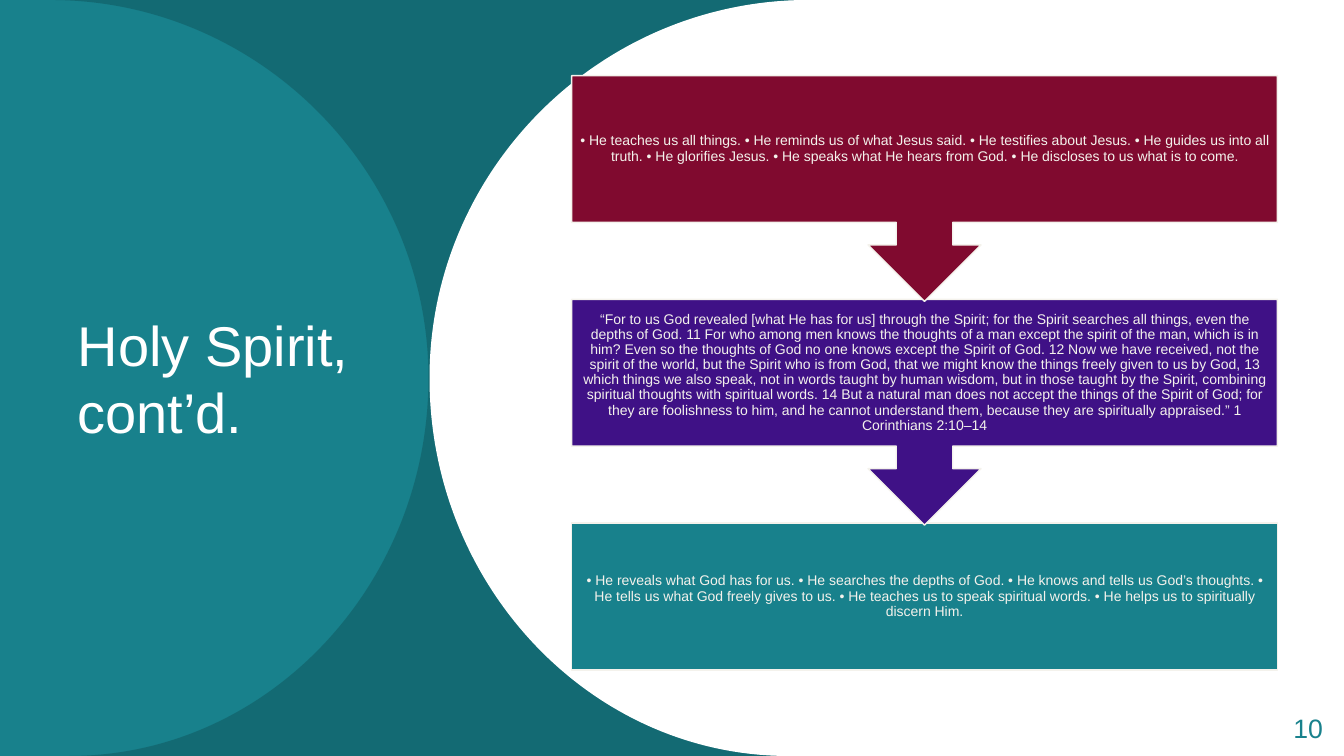
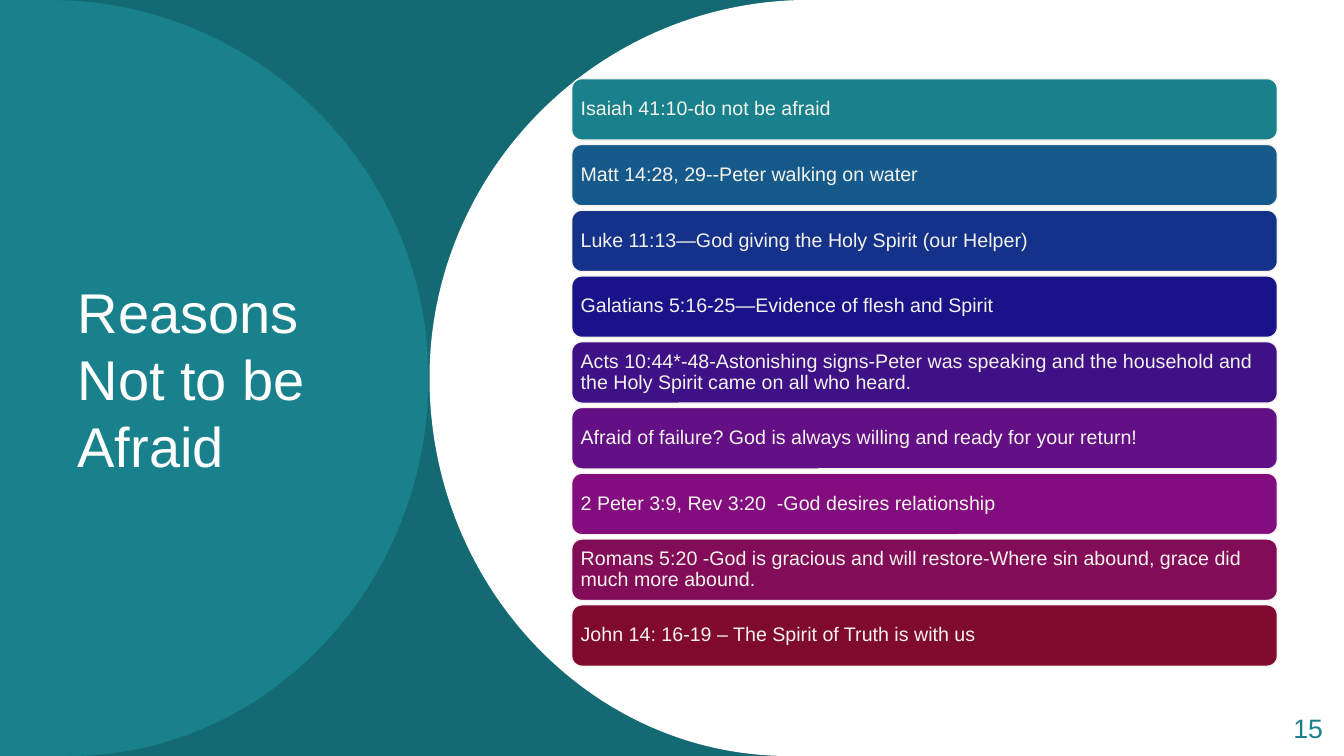
from lxml.etree import SubElement
from pptx import Presentation
from pptx.dml.color import RGBColor
from pptx.enum.shapes import MSO_SHAPE as Kind
from pptx.enum.text import MSO_ANCHOR as Anchor, MSO_AUTO_SIZE as Fit, PP_ALIGN as Align
from pptx.oxml.ns import qn
from pptx.util import Inches, Pt

# Content
STEPS = [
    ("800A2F", "• He teaches us all things. • He reminds us of what Jesus said. "
     "• He testifies about Jesus. • He guides us into all truth. • He glorifies Jesus. "
     "• He speaks what He hears from God. • He discloses to us what is to come."),
    ("3F1186", "“For to us God revealed [what He has for us] through the Spirit; "
     "for the Spirit searches all things, even the depths of God. 11 For who among men "
     "knows the thoughts of a man except the spirit of the man, which is in him? Even so "
     "the thoughts of God no one knows except the Spirit of God. 12 Now we have received, "
     "not the spirit of the world, but the Spirit who is from God, that we might know the "
     "things freely given to us by God, 13 which things we also speak, not in words taught "
     "by human wisdom, but in those taught by the Spirit, combining spiritual thoughts with "
     "spiritual words. 14 But a natural man does not accept the things of the Spirit of God; "
     "for they are foolishness to him, and he cannot understand them, because they are "
     "spiritually appraised.” 1 Corinthians 2:10–14"),
    ("18818C", "• He reveals what God has for us. • He searches the depths of God. "
     "• He knows and tells us God’s thoughts. • He tells us what God freely gives to us. "
     "• He teaches us to speak spiritual words. • He helps us to spiritually discern Him."),
]
ROWS = [
    ("18818C", "Isaiah 41:10-do not be afraid"),
    ("165A8B", "Matt 14:28, 29--Peter walking on water"),
    ("143289", "Luke 11:13—God giving the Holy Spirit (our Helper)"),
    ("1A1288", "Galatians 5:16-25—Evidence of flesh and Spirit"),
    ("3F1186", "Acts 10:44*-48-Astonishing signs-Peter was speaking and the household "
     "and the Holy Spirit came on all who heard."),
    ("630F85", "Afraid of failure? God is always willing and ready for your return!"),
    ("830D7F", "2 Peter 3:9, Rev 3:20  -God desires relationship"),
    ("820C57", "Romans 5:20 -God is gracious and will restore-Where sin abound, "
     "grace did much more abound."),
    ("800A2F", "John 14: 16-19 – The Spirit of Truth is with us"),
]

# Shared style
WIDE, HIGH = 13.33, 7.5
TEAL, DARK, CREAM, WHITE = "18818C", "126169", "F4F2EC", "FFFFFF"
LEFT, SPAN = 5.67, 7

# Panels: fill, opacity, side edge, then the arc's start, middle and end
PANELS = {
    "teal": (TEAL, 100, 0, (8.04, 0), (4.29, 3.75), (7.85, 7.5)),
    "dark": (DARK, 70, 8.54, (0.5, 0), (4.25, 3.75), (0.69, 7.5)),
    "white": (WHITE, 100, 10.78, (8.02, 0), (4.26, 3.75), (7.82, 7.5)),
}
BEND = 0.55  # control length of a quarter circle


def color(text):
    return RGBColor.from_string(text)


def box(*sizes):
    return [Inches(size) for size in sizes]


def paint(shape, fill):
    shape.shadow.inherit = False
    shape.fill.solid()
    shape.fill.fore_color.rgb = color(fill)


def style(shape, text, size, ink, align, gap, pad=None):
    frame = shape.text_frame
    form = {"word_wrap": True, "auto_size": Fit.NONE, "vertical_anchor": Anchor.MIDDLE}
    if pad is not None:
        for side in ("left", "top", "right", "bottom"):
            form["margin_" + side] = Inches(pad)
    for name, value in form.items():
        setattr(frame, name, value)
    frame.text = text
    para = frame.paragraphs[0]
    para.alignment, para.line_spacing = align, gap
    for name, value in {"name": "Arial", "size": Pt(size)}.items():
        setattr(para.font, name, value)
    para.font.color.rgb = color(ink)


def panel(slide, fill, alpha, side, start, mid, end):
    """Area between a straight side edge and a half circle."""
    (ax, ay), (mx, my), (ex, ey) = start, mid, end
    curves = [(ax + (mx - ax) * BEND, ay), (mx, my + (ay - my) * BEND), mid,
              (mx, my + (ey - my) * BEND), (ex + (mx - ex) * BEND, ey), end]
    dots = [(round(x * 100), round(y * 100))
            for x, y in [(side, 0), start] + curves + [(side, HIGH)]]
    draft = slide.shapes.build_freeform(*dots[0], scale=Inches(0.01))
    draft.add_line_segments(dots[1:], close=True)
    shape = draft.convert_to_shape()
    # Turn the six arc points into two cubic curves
    lines = list(shape._element.iter(qn("a:lnTo")))[1:7]
    for trio in (lines[:3], lines[3:]):
        host = trio[0].getparent()
        curve = SubElement(host, qn("a:cubicBezTo"))
        host.insert(host.index(trio[0]), curve)
        for line in trio:
            curve.append(line[0])
            host.remove(line)
    paint(shape, fill)
    shape.line.fill.background()
    if alpha < 100:
        tone = next(shape._element.spPr.iter(qn("a:srgbClr")))
        SubElement(tone, qn("a:alpha")).set("val", str(alpha * 1000))


def card(slide, kind, top, tall, fill, text, size, align, pad):
    shape = slide.shapes.add_shape(kind, *box(LEFT, top, SPAN, tall))
    paint(shape, fill)
    shape.line.color.rgb = color(CREAM)
    shape.line.width = Pt(1)
    style(shape, text, size, CREAM, align, 0.9, pad)
    return shape


def start(deck, title, number):
    slide = deck.slides.add_slide(deck.slide_layouts[5])
    head = slide.shapes.title
    head.left, head.top, head.width, head.height = box(0.67, 0.75, 3.26, 6)
    style(head, title, 40, WHITE, Align.LEFT, 1.0)
    for name in ("teal", "dark"):
        panel(slide, *PANELS[name])
    slide.shapes._spTree.append(head._element)  # title above the teal panels
    panel(slide, *PANELS["white"])
    page = slide.shapes.add_textbox(*box(12.46, 7.04, 0.76, 0.4))
    style(page, number, 19, TEAL, Align.RIGHT, 0.9)
    return slide


def steps(slide):
    top, pitch, tall, part = 0.75, 2.22, 2.24, 0.65
    last = len(STEPS) - 1
    # Lower cards first, so each arrow tip lies on top
    for i in range(last, -1, -1):
        kind = Kind.RECTANGLE if i == last else Kind.DOWN_ARROW_CALLOUT
        deep = tall * part if i == last else tall
        shape = card(slide, kind, top + i * pitch, deep, *STEPS[i], 10, Align.CENTER, 0.08)
        if i < last:
            shape.adjustments[3] = part


def rows(slide):
    top, end, tall = 0.78, 6, 0.61
    pitch = (end - top) / (len(ROWS) - 1)
    for i, row in enumerate(ROWS):
        card(slide, Kind.ROUNDED_RECTANGLE, top + i * pitch, tall, *row, 14, Align.LEFT, 0.06)


def main():
    deck = Presentation()
    deck.slide_width, deck.slide_height = box(WIDE, HIGH)
    steps(start(deck, "Holy Spirit, cont’d.", "10"))
    rows(start(deck, "Reasons Not to be Afraid", "15"))
    deck.save("out.pptx")


if __name__ == "__main__":
    main()
